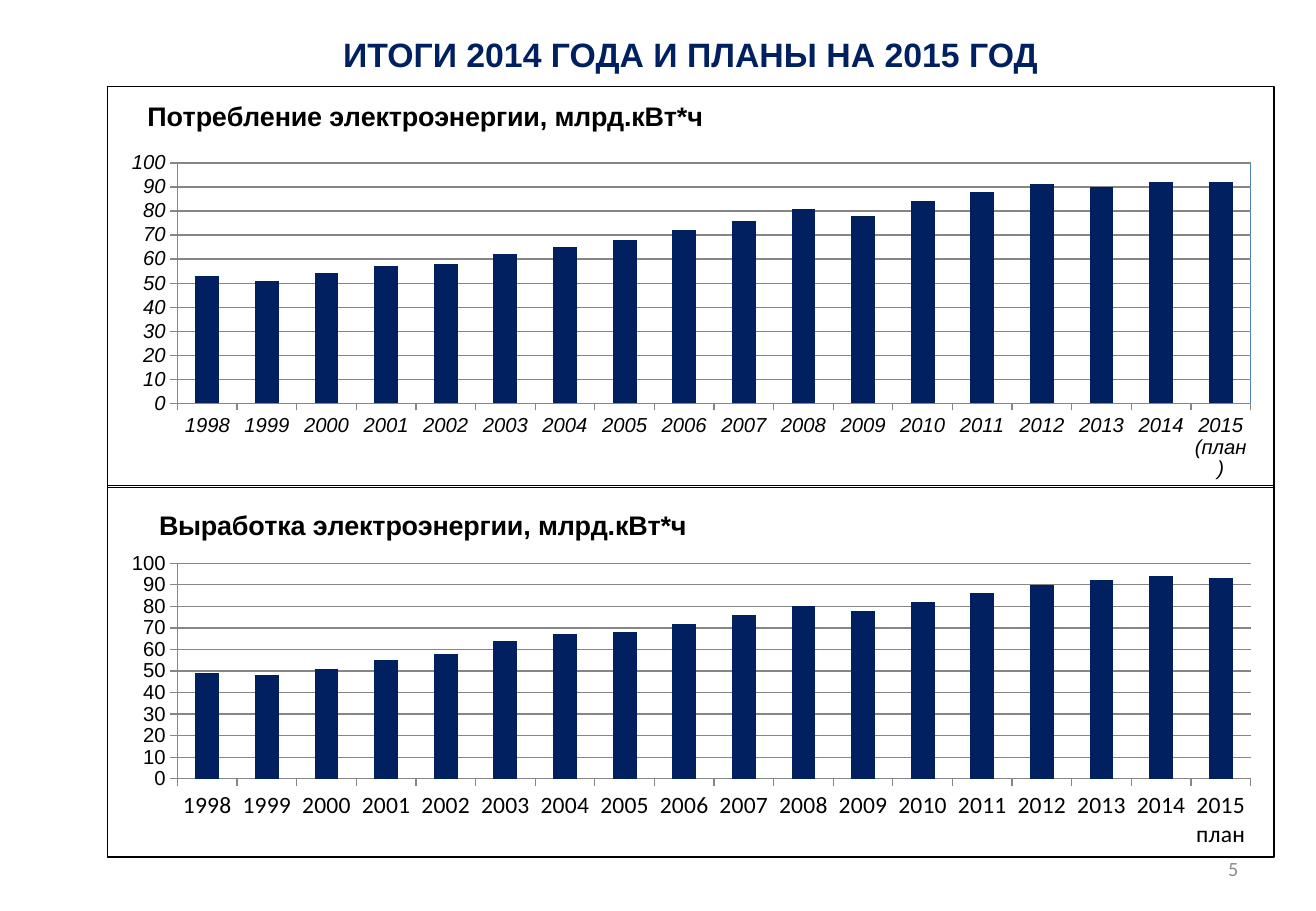
from lxml import etree
from pptx import Presentation
from pptx.chart.data import CategoryChartData
from pptx.dml.color import RGBColor
from pptx.enum.chart import XL_CHART_TYPE, XL_TICK_MARK
from pptx.enum.text import MSO_ANCHOR, PP_ALIGN
from pptx.oxml import parse_xml
from pptx.oxml.ns import nsdecls, qn
from pptx.util import Inches, Pt

STACKED = XL_CHART_TYPE.COLUMN_STACKED
OUTSIDE, NO_TICK = XL_TICK_MARK.OUTSIDE, XL_TICK_MARK.NONE
MIDDLE = MSO_ANCHOR.MIDDLE
CENTER, RIGHT = PP_ALIGN.CENTER, PP_ALIGN.RIGHT
NAVY, BLACK, GRID_GREY, NUMBER_GREY = "002060", "000000", "868686", "8C8C8C"
PLOT_BLUE = "4F81BD"

# Content
WIDTH, HEIGHT = 10.83, 7.5
HEADING = "ИТОГИ 2014 ГОДА И ПЛАНЫ НА 2015 ГОД"
PAGE_NUMBER = "5"
YEARS = [str(year) for year in range(1998, 2015)]
CHART_LEFT, CHART_WIDTH = 0.88, 9.61
PLOT_LEFT, PLOT_WIDTH = 0.06, 0.92  # shares of the chart's width
CHARTS = [
    {"title": "Потребление электроэнергии, млрд.кВт*ч", "plan": "2015 (план)",
     "values": [53, 51, 54, 57, 58, 62, 65, 68, 72, 76, 81, 78, 84, 88, 91, 90, 92, 92],
     "top": 0.71, "height": 3.31, "title_at": (0.03, 0.02), "plot_rows": (0.19, 0.6),
     "year_font": ("Arial", 12), "italic": True, "plot_border": PLOT_BLUE},
    {"title": "Выработка электроэнергии, млрд.кВт*ч", "plan": "2015 план",
     "values": [49, 48, 51, 55, 58, 64, 67, 68, 72, 76, 80, 78, 82, 86, 90, 92, 94, 93],
     "top": 3.99, "height": 3.07, "title_at": (0.04, 0.05), "plot_rows": (0.21, 0.58),
     "year_font": ("Calibri", 14), "italic": False, "plot_border": None},
]


def color(value):
    return RGBColor.from_string(value)


def set_font(font, name, size, fill=BLACK, bold=False, italic=False):
    font.name, font.size = name, Pt(size)
    font.bold, font.italic = bold, italic
    font.color.rgb = color(fill)


def add_text(slide, text, box, align, *font):
    shape = slide.shapes.add_textbox(*[Inches(length) for length in box])
    frame = shape.text_frame
    frame.word_wrap, frame.vertical_anchor = True, MIDDLE
    paragraph = frame.paragraphs[0]
    paragraph.text, paragraph.alignment = text, align
    set_font(paragraph.font, *font)


def layout(**shares):
    """Manual placement inside a chart, in shares of its size."""
    element = parse_xml(f"<c:layout {nsdecls('c')}><c:manualLayout/></c:layout>")
    settings = {"xMode": "edge", "yMode": "edge", **shares}
    if "w" in shares:
        settings = {"layoutTarget": "inner", **settings}
    for name, value in settings.items():
        etree.SubElement(element[0], qn(f"c:{name}")).set("val", str(value))
    return element


def place(parent, element, index):
    for old in parent.findall(qn("c:layout")):
        parent.remove(old)
    parent.insert(index, element)


def border(line_color):
    return parse_xml(
        f'<c:spPr {nsdecls("c", "a")}><a:noFill/><a:ln w="9525"><a:solidFill>'
        f'<a:srgbClr val="{line_color}"/></a:solidFill></a:ln></c:spPr>')


def add_chart(slide, content):
    data = CategoryChartData()
    data.categories = YEARS + [content["plan"]]
    data.add_series(content["title"], content["values"])
    box = (CHART_LEFT, content["top"], CHART_WIDTH, content["height"])
    chart = slide.shapes.add_chart(STACKED, *[Inches(length) for length in box], data).chart
    set_font(chart.font, *content["year_font"])
    chart.has_legend = False

    # Title
    chart.has_title = True
    title = chart.chart_title
    title.include_in_layout = False
    paragraph = title.text_frame.paragraphs[0]
    paragraph.text = content["title"]
    set_font(paragraph.font, "Arial", 16, bold=True)
    left, top = content["title_at"]
    place(title._element, layout(x=left, y=top), 1)

    # Columns
    plot = chart.plots[0]
    plot.gap_width, plot.overlap, plot.vary_by_categories = 150, 100, False
    fill = plot.series[0].format.fill
    fill.solid()
    fill.fore_color.rgb = color(NAVY)

    # Axes
    years, amounts = chart.category_axis, chart.value_axis
    amounts.minimum_scale, amounts.maximum_scale, amounts.major_unit = 0, 100, 10
    amounts.has_major_gridlines = True
    for axis, font in ((years, content["year_font"]), (amounts, ("Arial", 12))):
        set_font(axis.tick_labels.font, *font, italic=content["italic"])
        axis.major_tick_mark, axis.minor_tick_mark = OUTSIDE, NO_TICK
    for line in (years.format.line, amounts.format.line, amounts.major_gridlines.format.line):
        line.color.rgb, line.width = color(GRID_GREY), Pt(0.75)

    # Plot position and borders
    space = chart._chartSpace
    area = space.find(f"{qn('c:chart')}/{qn('c:plotArea')}")
    top, height = content["plot_rows"]
    place(area, layout(x=PLOT_LEFT, y=top, w=PLOT_WIDTH, h=height), 0)
    if content["plot_border"]:
        area.append(border(content["plot_border"]))
    space.find(qn("c:chart")).addnext(border(BLACK))


def main():
    presentation = Presentation()
    presentation.slide_width, presentation.slide_height = Inches(WIDTH), Inches(HEIGHT)
    slide = presentation.slides.add_slide(presentation.slide_layouts[6])
    add_text(slide, HEADING, (0.65, 0.21, 10.07, 0.47), CENTER, "Arial", 20, NAVY, True)
    for content in CHARTS:
        add_chart(slide, content)
    add_text(slide, PAGE_NUMBER, (7.76, 6.95, 2.53, 0.4), RIGHT, "Calibri", 12, NUMBER_GREY)
    presentation.save("out.pptx")


if __name__ == "__main__":
    main()
